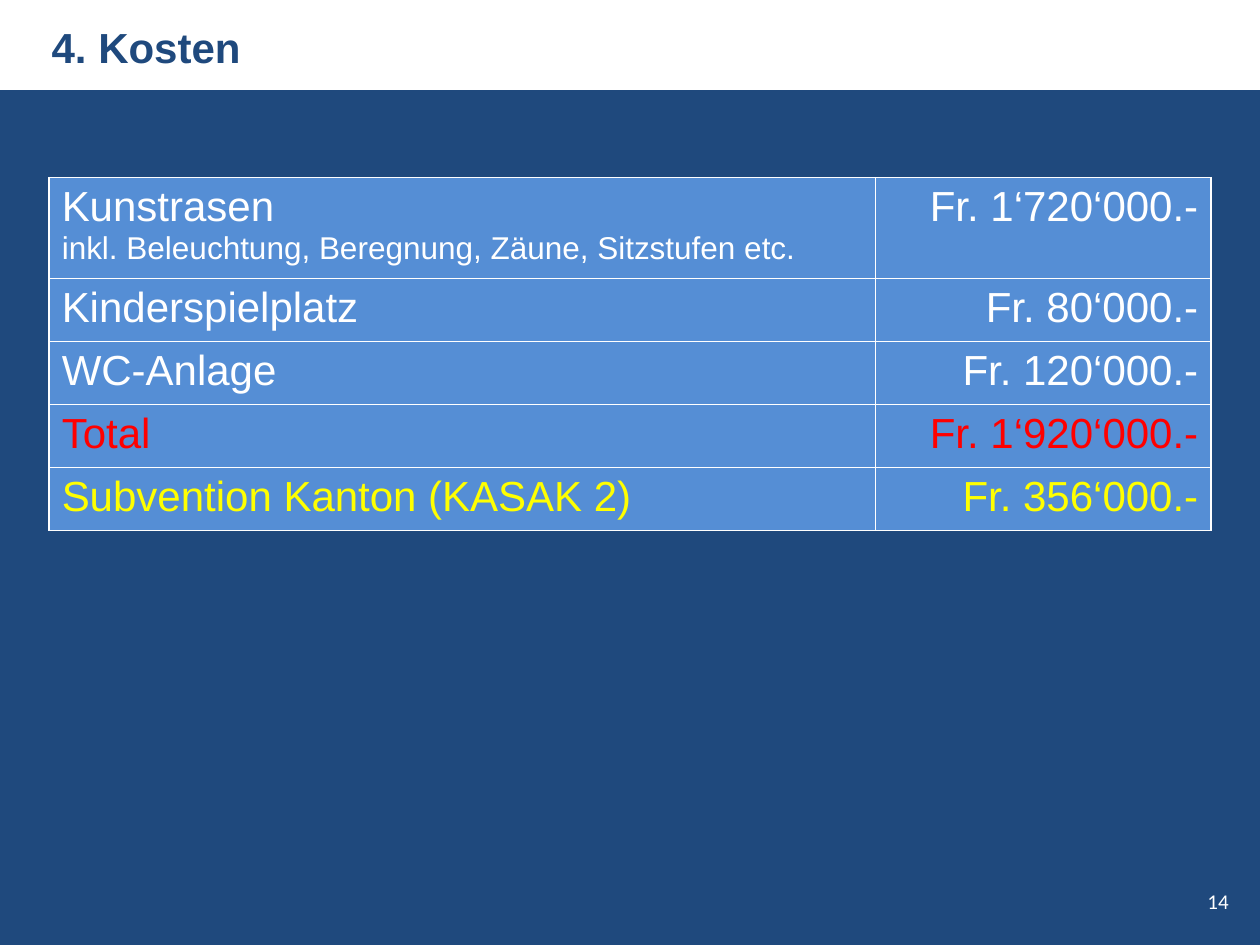
from dataclasses import dataclass
from lxml.etree import SubElement
from pptx import Presentation
from pptx.dml.color import RGBColor as RGB
from pptx.enum.shapes import MSO_SHAPE as Shape
from pptx.enum.text import MSO_ANCHOR as Anchor, PP_ALIGN as Align
from pptx.oxml.ns import qn
from pptx.util import Inches, Pt


@dataclass(frozen=True)
class Theme:
    navy: str = "1F497D"
    white: str = "FFFFFF"
    cell: str = "558ED5"
    total: str = "FF0000"
    subsidy: str = "FFFF00"
    font: str = "Arial"
    number_font: str = "Calibri"
    large: int = 24
    detail: int = 18
    small: int = 12


THEME = Theme()

# Content: label, detail, amount, colour
TITLE = "4. Kosten"
PAGE_NUMBER = "14"
COSTS = [
    ("Kunstrasen", "inkl. Beleuchtung, Beregnung, Zäune, Sitzstufen etc.",
     "Fr. 1‘720‘000.-", THEME.white),
    ("Kinderspielplatz", None, "Fr. 80‘000.-", THEME.white),
    ("WC-Anlage", None, "Fr. 120‘000.-", THEME.white),
    ("Total", None, "Fr. 1‘920‘000.-", THEME.total),
    ("Subvention Kanton (KASAK 2)", None, "Fr. 356‘000.-", THEME.subsidy),
]

# Layout, in inches
WIDTH, HEIGHT = 10, 7.5
BAND_HEIGHT = 0.7
TABLE_LEFT, TABLE_TOP = 0.39, 1.41
COLUMNS = (6.56, 2.66)
ROW_HEIGHT, DETAIL_HEIGHT = 0.5, 0.3


def add_span(para, text, size, color, font=THEME.font, bold=False):
    span = para.add_run()
    span.text = text
    span.font.size, span.font.name, span.font.bold = Pt(size), font, bold
    span.font.color.rgb = RGB.from_string(color)


def place(box, left, top, width, height):
    box.left, box.top = Inches(left), Inches(top)
    box.width, box.height = Inches(width), Inches(height)


def style_cell(cell):
    properties = cell._tc.get_or_add_tcPr()
    for side in ("a:lnL", "a:lnR", "a:lnT", "a:lnB"):
        line = SubElement(properties, qn(side), w=str(Pt(1)))
        fill = SubElement(line, qn("a:solidFill"))
        SubElement(fill, qn("a:srgbClr"), val=THEME.white)
    cell.fill.solid()
    cell.fill.fore_color.rgb = RGB.from_string(THEME.cell)


def add_header(page):
    title = page.shapes.title
    place(title, 0.31, 0.12, 6.8, 0.5)
    title.text_frame.vertical_anchor = Anchor.TOP
    para = title.text_frame.paragraphs[0]
    para.alignment = Align.LEFT
    add_span(para, TITLE, THEME.large, THEME.navy, bold=True)

    band = page.shapes.add_shape(Shape.RECTANGLE, 0, 0, Inches(WIDTH), Inches(BAND_HEIGHT))
    band.shadow.inherit = False
    band.fill.solid()
    band.fill.fore_color.rgb = band.line.color.rgb = RGB.from_string(THEME.white)
    band.line.width = Pt(2)
    title.element.addprevious(band.element)  # the band lies behind the title


def add_costs(page):
    heights = [ROW_HEIGHT + (DETAIL_HEIGHT if detail else 0) for _, detail, _, _ in COSTS]
    frame = page.shapes.add_table(
        len(COSTS), len(COLUMNS), Inches(TABLE_LEFT), Inches(TABLE_TOP),
        Inches(sum(COLUMNS)), Inches(sum(heights)))
    table = frame.table
    table.first_row = table.horz_banding = False
    for column, width in zip(table.columns, COLUMNS):
        column.width = Inches(width)
    for row, height, (label, detail, amount, color) in zip(table.rows, heights, COSTS):
        row.height = Inches(height)
        name_cell, amount_cell = row.cells
        for cell, text in ((name_cell, label), (amount_cell, amount)):
            style_cell(cell)
            add_span(cell.text_frame.paragraphs[0], text, THEME.large, color)
        amount_cell.text_frame.paragraphs[0].alignment = Align.RIGHT
        if detail:
            add_span(name_cell.text_frame.add_paragraph(), detail, THEME.detail, color)


def add_page_number(page):
    box = page.shapes.add_textbox(0, 0, 0, 0)
    place(box, 7.52, 6.95, 2.33, 0.4)
    box.text_frame.word_wrap = True
    box.text_frame.vertical_anchor = Anchor.MIDDLE
    para = box.text_frame.paragraphs[0]
    para.alignment = Align.RIGHT
    add_span(para, PAGE_NUMBER, THEME.small, THEME.white, THEME.number_font)


def main():
    deck = Presentation()
    deck.slide_width, deck.slide_height = Inches(WIDTH), Inches(HEIGHT)
    page = deck.slides.add_slide(deck.slide_layouts[5])
    page.background.fill.solid()
    page.background.fill.fore_color.rgb = RGB.from_string(THEME.navy)
    add_header(page)
    add_costs(page)
    add_page_number(page)
    deck.save("out.pptx")


if __name__ == "__main__":
    main()
